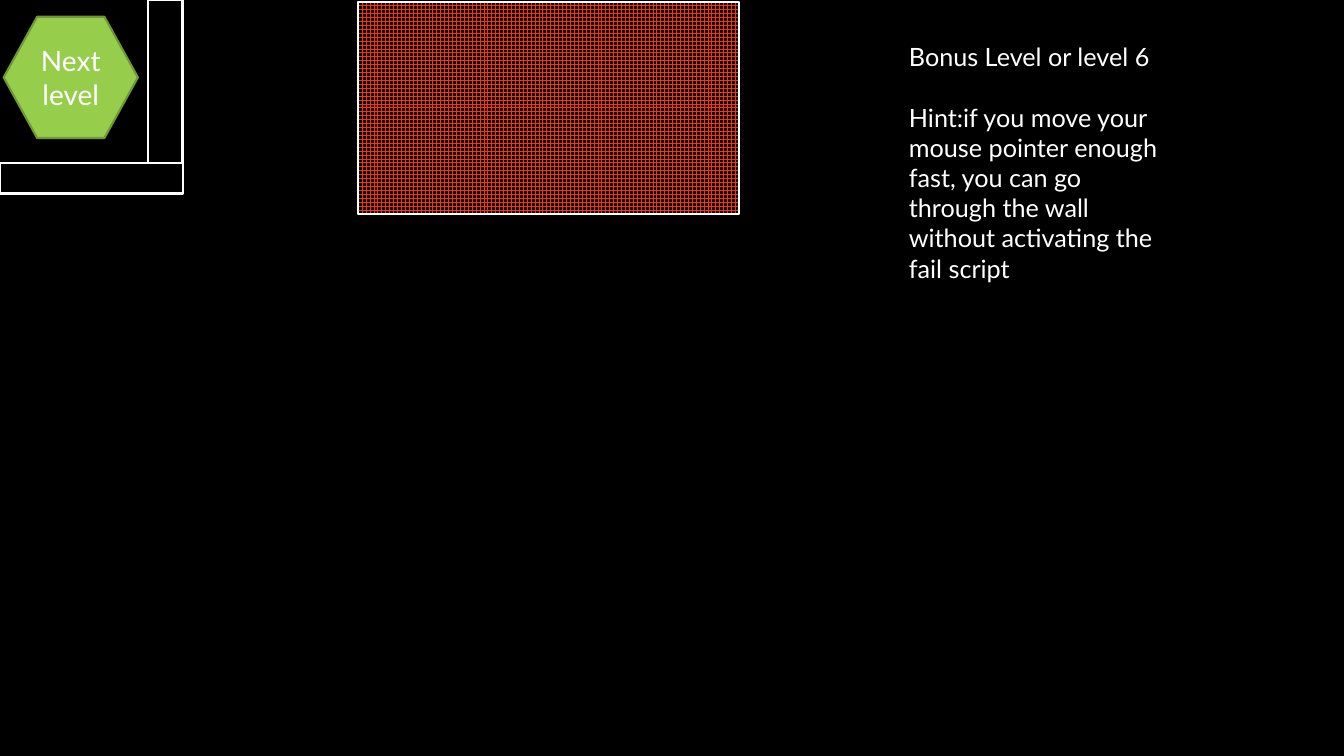
from dataclasses import dataclass

from pptx import Presentation
from pptx.dml.color import RGBColor
from pptx.enum.dml import MSO_PATTERN
from pptx.enum.shapes import MSO_SHAPE
from pptx.enum.text import MSO_ANCHOR, MSO_AUTO_SIZE, PP_ALIGN
from pptx.shapes.autoshape import Shape
from pptx.slide import Slide
from pptx.text.text import _Paragraph
from pptx.util import Pt

COLOURS = {
    "black": "000000",
    "white": "FFFFFF",
    "green": "96CD4B",
    "dark green": "6F9837",
    "red": "FF3300",
}
FONT = "Lato"


@dataclass
class Block:
    left: float
    top: float
    width: float
    height: float
    fill: str = "black"
    line: str = "white"
    preset: MSO_SHAPE = MSO_SHAPE.RECTANGLE


def colour(name: str) -> RGBColor:
    return RGBColor.from_string(COLOURS[name])


def draw_block(page: Slide, block: Block) -> Shape:
    shape = page.shapes.add_shape(
        block.preset, Pt(block.left), Pt(block.top), Pt(block.width), Pt(block.height)
    )
    shape.shadow.inherit = False
    shape.fill.solid()
    shape.fill.fore_color.rgb = colour(block.fill)
    shape.line.color.rgb = colour(block.line)
    shape.line.width = Pt(1.5)
    return shape


def write(para: _Paragraph, text: str, size: float) -> None:
    span = para.add_run()
    span.text = text
    span.font.name = FONT
    span.font.size = Pt(size)
    span.font.color.rgb = colour("white")


def main() -> None:
    deck = Presentation()
    deck.slide_width, deck.slide_height = Pt(960), Pt(540)
    page = deck.slides.add_slide(deck.slide_layouts[6])
    page.background.fill.solid()
    page.background.fill.fore_color.rgb = colour("black")

    # Walls around the goal
    for wall in (Block(105.84, 0, 24.6, 116.64), Block(0, 116.64, 130.8, 21.6)):
        draw_block(page, wall)

    # Goal button
    goal = draw_block(
        page,
        Block(2.6, 12, 95.9, 86.6, "green", "dark green", MSO_SHAPE.HEXAGON),
    )
    goal.adjustments[0] = 0.276
    goal.text_frame.word_wrap = True
    goal.text_frame.vertical_anchor = MSO_ANCHOR.MIDDLE
    label = goal.text_frame.paragraphs[0]
    label.alignment = PP_ALIGN.CENTER
    write(label, "Next level", 20)

    # Gridded obstacle
    obstacle = draw_block(page, Block(255.8, 1.2, 272.3, 151.7))
    obstacle.fill.patterned()
    obstacle.fill.pattern = MSO_PATTERN.LARGE_GRID
    obstacle.fill.fore_color.rgb = colour("red")
    obstacle.fill.back_color.rgb = colour("black")

    # Level name and hint
    box = page.shapes.add_textbox(Pt(642.2), Pt(26), Pt(198.7), Pt(181.4))
    frame = box.text_frame
    frame.word_wrap = True
    frame.auto_size = MSO_AUTO_SIZE.SHAPE_TO_FIT_TEXT
    write(frame.paragraphs[0], "Bonus Level or level 6", 18)
    hint = frame.add_paragraph()
    hint.space_before = Pt(21.6)
    write(
        hint,
        "Hint:if you move your mouse pointer enough fast, you can go "
        "through the wall without activating the fail script",
        18,
    )

    deck.save("out.pptx")


if __name__ == "__main__":
    main()
